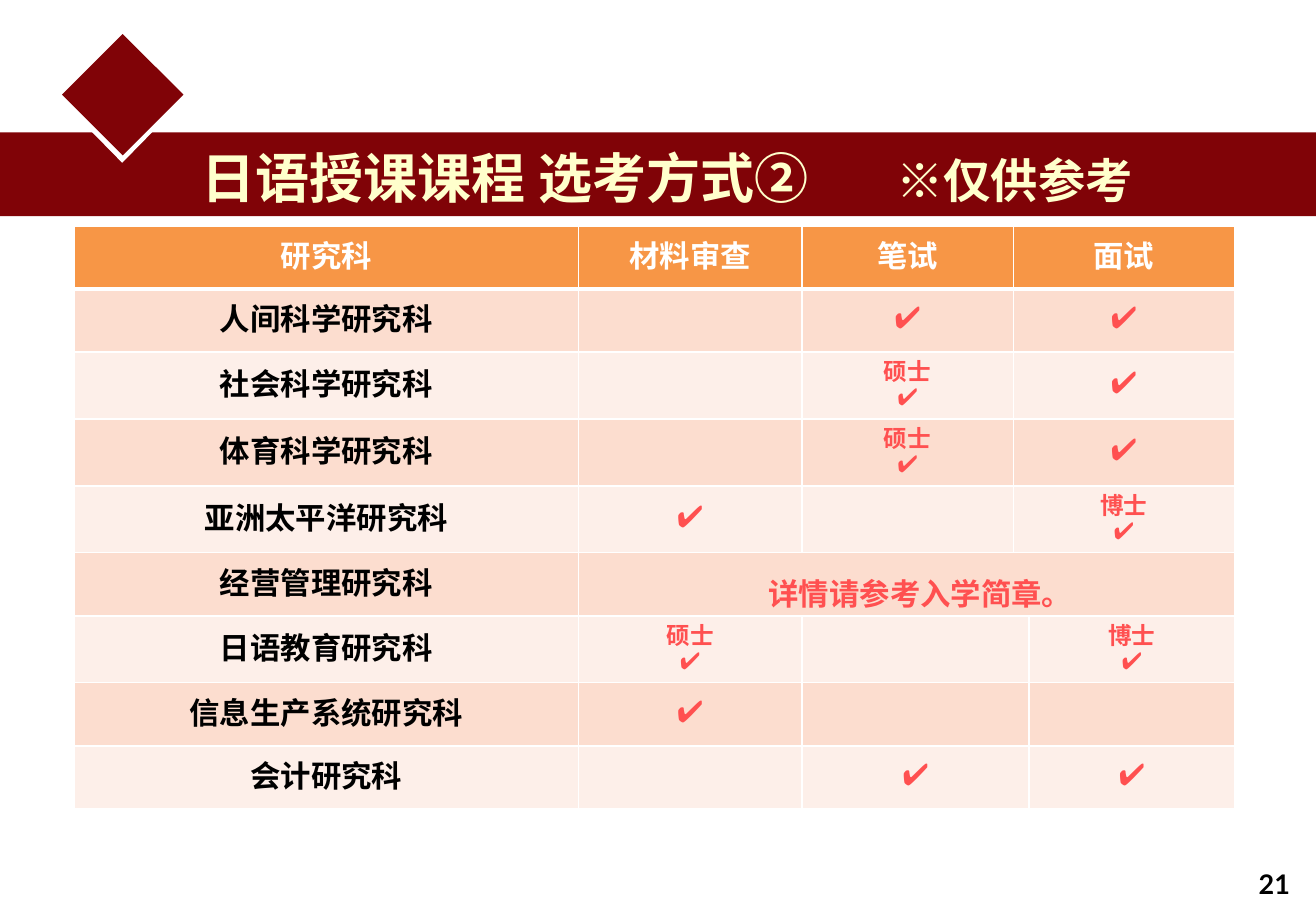
import dataclasses
import itertools

import lxml.etree
import pptx
import pptx.dml.color
import pptx.enum.shapes
import pptx.enum.text
import pptx.oxml.ns
import pptx.util

SHAPE = pptx.enum.shapes.MSO_SHAPE
ALIGN = pptx.enum.text.PP_ALIGN
MIDDLE = pptx.enum.text.MSO_ANCHOR.MIDDLE
CHECK = "✔"
MASTER = "硕士\n✔"
DOCTOR = "博士\n✔"


@dataclasses.dataclass(frozen=True)
class Theme:
    """Colours, fonts and type sizes of the deck."""
    maroon: str = "800307"
    cream: str = "FFFFCC"
    white: str = "FFFFFF"
    black: str = "000000"
    red: str = "FF5050"
    header: str = "F79646"
    bands: tuple = ("FDEFE9", "FCDDCF")
    title_face: str = "Noto Sans CJK SC"
    body_face: str = "Roboto"
    check_face: str = "Courier New"
    number_face: str = "Lato"
    title: int = 32
    subtitle: int = 28
    body: int = 18
    number: int = 16
    small: int = 14


def color(value):
    """Turn a hex string into a colour."""
    return pptx.dml.color.RGBColor.from_string(value)


def add_xml(parent, tag, **attributes):
    """Append a drawing element to a parent."""
    return lxml.etree.SubElement(parent, pptx.oxml.ns.qn(tag), attributes)


class Page:
    """A slide whose lengths are given in percent of its size."""

    def __init__(self, deck, theme):
        """Add a title-only slide to the deck."""
        self.deck, self.theme = deck, theme
        self.slide = deck.slides.add_slide(deck.slide_layouts[5])

    def across(self, share):
        """Convert a share of the slide width."""
        return round(self.deck.slide_width * share / 100)

    def down(self, share):
        """Convert a share of the slide height."""
        return round(self.deck.slide_height * share / 100)

    def place(self, left, top, width, height):
        """Convert a rectangle of shares."""
        return self.across(left), self.down(top), self.across(width), self.down(height)

    def add_span(self, para, text, face, size, ink):
        """Add one bold span to a paragraph."""
        span = para.add_run()
        span.text = text
        values = {"name": face, "size": pptx.util.Pt(size), "bold": True}
        for name, value in values.items():
            setattr(span.font, name, value)
        span.font.color.rgb = color(ink)
        add_xml(span._r.get_or_add_rPr(), "a:ea", typeface=face)

    def shape(self, kind, area, fill, rotation=0):
        """Add a plain filled shape."""
        shape = self.slide.shapes.add_shape(kind, *self.place(*area))
        shape.shadow.inherit = False
        shape.fill.solid()
        shape.fill.fore_color.rgb = color(fill)
        shape.line.fill.background()
        shape.rotation = rotation

    def title(self, area, text, remark, remark_at):
        """Place the title in front of the band, with a remark at a tab stop."""
        title = self.slide.shapes.title
        self.slide.shapes._spTree.append(title._element)
        title.left, title.top, title.width, title.height = self.place(*area)
        frame = title.text_frame
        values = {"word_wrap": True, "vertical_anchor": MIDDLE,
                  "auto_size": pptx.enum.text.MSO_AUTO_SIZE.NONE}
        for name, value in values.items():
            setattr(frame, name, value)
        para = frame.paragraphs[0]
        para.alignment = ALIGN.LEFT
        tabs = add_xml(para._p.get_or_add_pPr(), "a:tabLst")
        add_xml(tabs, "a:tab", pos=str(self.across(remark_at)), algn="l")
        look = self.theme
        self.add_span(para, text + "\t", look.title_face, look.title, look.cream)
        self.add_span(para, remark, look.title_face, look.subtitle, look.cream)

    def text(self, area, text, face, size, ink, align, wrap=True):
        """Add a one-line text box."""
        box = self.slide.shapes.add_textbox(*self.place(*area))
        box.text_frame.word_wrap = wrap
        para = box.text_frame.paragraphs[0]
        para.alignment = align
        self.add_span(para, text, face, size, ink)

    def cell(self, cell, text, fill, ink, top, bottom):
        """Style one table cell and fill in its lines."""
        properties = cell._tc.get_or_add_tcPr()
        for side, width in {"L": 1, "R": 1, "T": top, "B": bottom}.items():
            line = add_xml(properties, "a:ln" + side, w=str(pptx.util.Pt(width)))
            add_xml(add_xml(line, "a:solidFill"), "a:srgbClr", val=self.theme.white)
        cell.fill.solid()
        cell.fill.fore_color.rgb = color(fill)
        cell.vertical_anchor = MIDDLE
        lines = text.split("\n") if text else []
        size = self.theme.small if len(lines) > 1 else self.theme.body
        for index, words in enumerate(lines):
            frame = cell.text_frame
            para = frame.add_paragraph() if index else frame.paragraphs[0]
            para.alignment = ALIGN.CENTER
            face = self.theme.check_face if words == CHECK else self.theme.body_face
            self.add_span(para, words, face, size, ink)

    def table(self, left, top, columns, row_height, rows):
        """Add a table in which None continues the cell to its left."""
        area = self.place(left, top, sum(columns), row_height * len(rows))
        table = self.slide.shapes.add_table(len(rows), len(columns), *area).table
        table.first_row = table.horz_banding = False
        for column, width in zip(table.columns, columns):
            column.width = self.across(width)
        look = self.theme
        for row, column in itertools.product(range(len(rows)), range(len(columns))):
            fill = look.bands[row % 2] if row else look.header
            ink = look.white if not row else look.red if column else look.black
            self.cell(table.cell(row, column), rows[row][column], fill, ink,
                      3 if row == 1 else 1, 1 if row else 3)
        for row, texts in enumerate(rows):
            if None in texts:
                first = texts.index(None)
                last = first + texts.count(None) - 1
                table.cell(row, first - 1).merge(table.cell(row, last))


def main():
    """Build the slide and save it."""
    deck = pptx.Presentation()
    deck.slide_width = pptx.util.Inches(10.83)
    deck.slide_height = pptx.util.Inches(7.5)
    theme = Theme()
    page = Page(deck, theme)
    page.text((94.74, 94.53, 5.26, 4.93), "21", theme.number_face, theme.number,
              theme.black, ALIGN.LEFT, wrap=False)
    page.shape(SHAPE.RECTANGLE, (0, 14.53, 100, 9.2), theme.maroon)
    page.shape(SHAPE.ISOSCELES_TRIANGLE, (6.93, 14.4, 4.71, 3.47), theme.white, 180)
    page.shape(SHAPE.DIAMOND, (4.71, 3.73, 9.23, 13.33), theme.maroon)
    page.title((14.4, 15.2, 80, 8.53), "日语授课课程 选考方式②", "※仅供参考", 52.8)
    page.table(5.63, 24.8, (38.32, 16.99, 16.07, 1.2, 15.6), 6.93, (
        ("研究科", "材料审查", "笔试", "面试", None),
        ("人间科学研究科", "", CHECK, CHECK, None),
        ("社会科学研究科", "", MASTER, CHECK, None),
        ("体育科学研究科", "", MASTER, CHECK, None),
        ("亚洲太平洋研究科", CHECK, "", DOCTOR, None),
        ("经营管理研究科", "", None, None, None),
        ("日语教育研究科", MASTER, "", None, DOCTOR),
        ("信息生产系统研究科", CHECK, "", None, ""),
        ("会计研究科", "", CHECK, None, CHECK),
    ))
    page.text((46.72, 62.53, 46.45, 5.33), "详情请参考入学简章。", theme.body_face,
              theme.body, theme.red, ALIGN.CENTER)
    deck.save("out.pptx")


if __name__ == "__main__":
    main()
